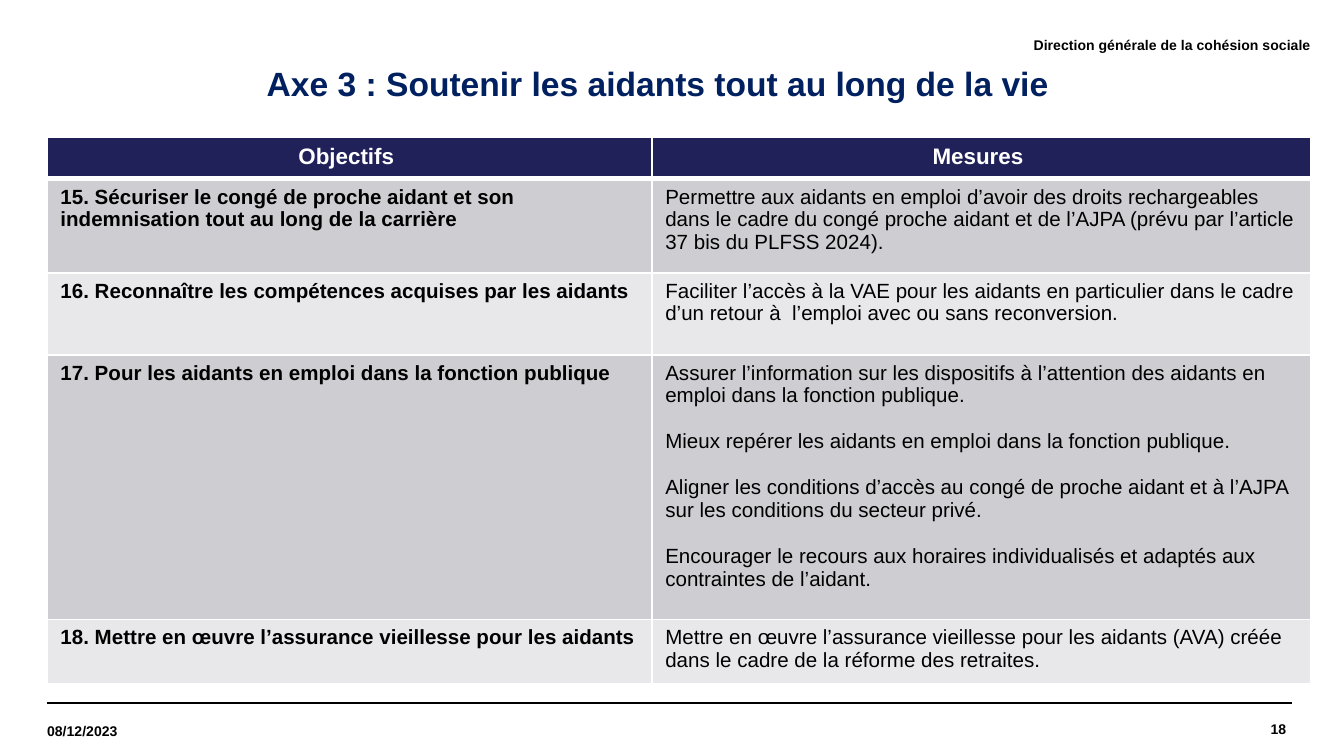
import pptx
import pptx.dml.color
import pptx.enum.shapes
import pptx.enum.text
import pptx.oxml
import pptx.oxml.ns
import pptx.util
from lxml import etree

Inches = pptx.util.Inches
Pt = pptx.util.Pt
ALIGN = pptx.enum.text.PP_ALIGN
ANCHOR = pptx.enum.text.MSO_ANCHOR

COLORS = {
    "text": "000000",
    "title": "002060",
    "header": "21215A",
    "white": "FFFFFF",
    "band_dark": "CDCDD2",
    "band_light": "E8E8EA",
}

COLUMN_WIDTHS = [4.5, 4.9]
ROW_HEIGHTS = [0.31, 0.7, 0.61, 1.97, 0.48]
HEADINGS = ["Objectifs ", "Mesures "]
GOALS = [
    ("15. Sécuriser le congé de proche aidant et son indemnisation tout au long de la carrière",
     ["Permettre aux aidants en emploi d’avoir des droits rechargeables dans le cadre du congé "
      "proche aidant et de l’AJPA (prévu par l’article 37 bis du PLFSS 2024)."]),
    ("16. Reconnaître les compétences acquises par les aidants",
     ["Faciliter l’accès à la VAE pour les aidants en particulier dans le cadre d’un retour à  "
      "l’emploi avec ou sans reconversion."]),
    ("17. Pour les aidants en emploi dans la fonction publique",
     ["Assurer l’information sur les dispositifs à l’attention des aidants en emploi dans la "
      "fonction publique.",
      "Mieux repérer les aidants en emploi dans la fonction publique.",
      "Aligner les conditions d’accès au congé de proche aidant et à l’AJPA sur les conditions "
      "du secteur privé.",
      "Encourager le recours aux horaires individualisés et adaptés aux contraintes de l’aidant."]),
    ("18. Mettre en œuvre l’assurance vieillesse pour les aidants",
     ["Mettre en œuvre l’assurance vieillesse pour les aidants (AVA) créée dans le cadre de la "
      "réforme des retraites."]),
]


def rgb(name):
    return pptx.dml.color.RGBColor.from_string(COLORS[name])


def format_paragraph(paragraph, size, color="text", bold=True, align=ALIGN.LEFT):
    paragraph.alignment = align
    font = paragraph.font
    font.name = "Arial"
    font.size = Pt(size)
    font.bold = bold
    font.color.rgb = rgb(color)


def add_label(slide, text, left, top, width, height, align=ALIGN.LEFT):
    """Add a small bold text without margins, as used around the slide's edge."""
    label = slide.shapes.add_textbox(Inches(left), Inches(top), Inches(width), Inches(height))
    frame = label.text_frame
    frame.word_wrap = True
    frame.vertical_anchor = ANCHOR.MIDDLE
    frame.margin_left = frame.margin_right = frame.margin_top = frame.margin_bottom = 0
    frame.text = text
    format_paragraph(frame.paragraphs[0], 7.5, align=align)


def place_title(slide, text, left, top, width, height):
    title = slide.shapes.title
    title.left, title.top = Inches(left), Inches(top)
    title.width, title.height = Inches(width), Inches(height)
    frame = title.text_frame
    frame.text = text
    frame.word_wrap = True
    frame.auto_size = pptx.enum.text.MSO_AUTO_SIZE.NONE
    frame.vertical_anchor = ANCHOR.TOP
    format_paragraph(frame.paragraphs[0], 18, "title", align=ALIGN.CENTER)


def add_borders(cell, widths):
    """Draw white borders; widths maps the sides L, R, T and B to points."""
    properties = cell._tc.get_or_add_tcPr()
    for side, width in widths.items():
        properties.append(pptx.oxml.parse_xml(
            f'<a:ln{side} {pptx.oxml.ns.nsdecls("a")} w="{Pt(width)}"><a:solidFill>'
            f'<a:srgbClr val="{COLORS["white"]}"/></a:solidFill></a:ln{side}>'))


def fill_cell(cell, texts, background, borders, **style):
    add_borders(cell, borders)
    cell.fill.solid()
    cell.fill.fore_color.rgb = rgb(background)
    cell.text = "\n".join(texts)
    for index, paragraph in enumerate(cell.text_frame.paragraphs):
        if index:
            paragraph.space_before = Pt(12.4)
        format_paragraph(paragraph, **style)


def add_goals_table(slide, left, top):
    table = slide.shapes.add_table(
        len(ROW_HEIGHTS), len(COLUMN_WIDTHS), Inches(left), Inches(top),
        Inches(sum(COLUMN_WIDTHS)), Inches(sum(ROW_HEIGHTS))).table
    for column, width in zip(table.columns, COLUMN_WIDTHS):
        column.width = Inches(width)
    for row, height in zip(table.rows, ROW_HEIGHTS):
        row.height = Inches(height)

    thin = dict.fromkeys("LRTB", 1)
    for column, heading in enumerate(HEADINGS):
        fill_cell(table.cell(0, column), [heading], "header", {**thin, "B": 3},
                  size=12, color="white", align=ALIGN.CENTER)
    for row, (goal, measures) in enumerate(GOALS, start=1):
        band = "band_dark" if row % 2 else "band_light"
        borders = {**thin, "T": 3} if row == 1 else thin
        fill_cell(table.cell(row, 0), [goal], band, borders, size=11)
        fill_cell(table.cell(row, 1), measures, band, borders, size=11, bold=False)


def add_rule(slide, left, top, width):
    rule = slide.shapes.add_connector(
        pptx.enum.shapes.MSO_CONNECTOR.STRAIGHT,
        Inches(left), Inches(top), Inches(left + width), Inches(top))
    rule.line.color.rgb = rgb("text")
    rule.line.width = Pt(0.8)
    etree.SubElement(rule._element.spPr, pptx.oxml.ns.qn("a:effectLst"))


def add_footer(slide, left, top, width):
    for shift in (0, 0.04):
        add_rule(slide, left + shift, top, width)
    add_label(slide, "18", left + width - 1.48, top, 1.48, 0.39, ALIGN.RIGHT)
    add_label(slide, "08/12/2023", left, top + 0.02, 1.32, 0.38)


def main():
    presentation = pptx.Presentation()
    presentation.slide_width = Inches(10)
    presentation.slide_height = presentation.slide_width * 9 // 16
    slide = presentation.slides.add_slide(presentation.slide_layouts[5])
    add_footer(slide, 0.35, 5.23, 9.22)
    add_label(slide, "Direction générale de la cohésion sociale", 6.44, 0.14, 3.31, 0.39, ALIGN.RIGHT)
    add_goals_table(slide, 0.35, 1.02)
    place_title(slide, "Axe 3 : Soutenir les aidants tout au long de la vie", 0, 0.42, 9.79, 0.4)
    presentation.save("out.pptx")


if __name__ == "__main__":
    main()
